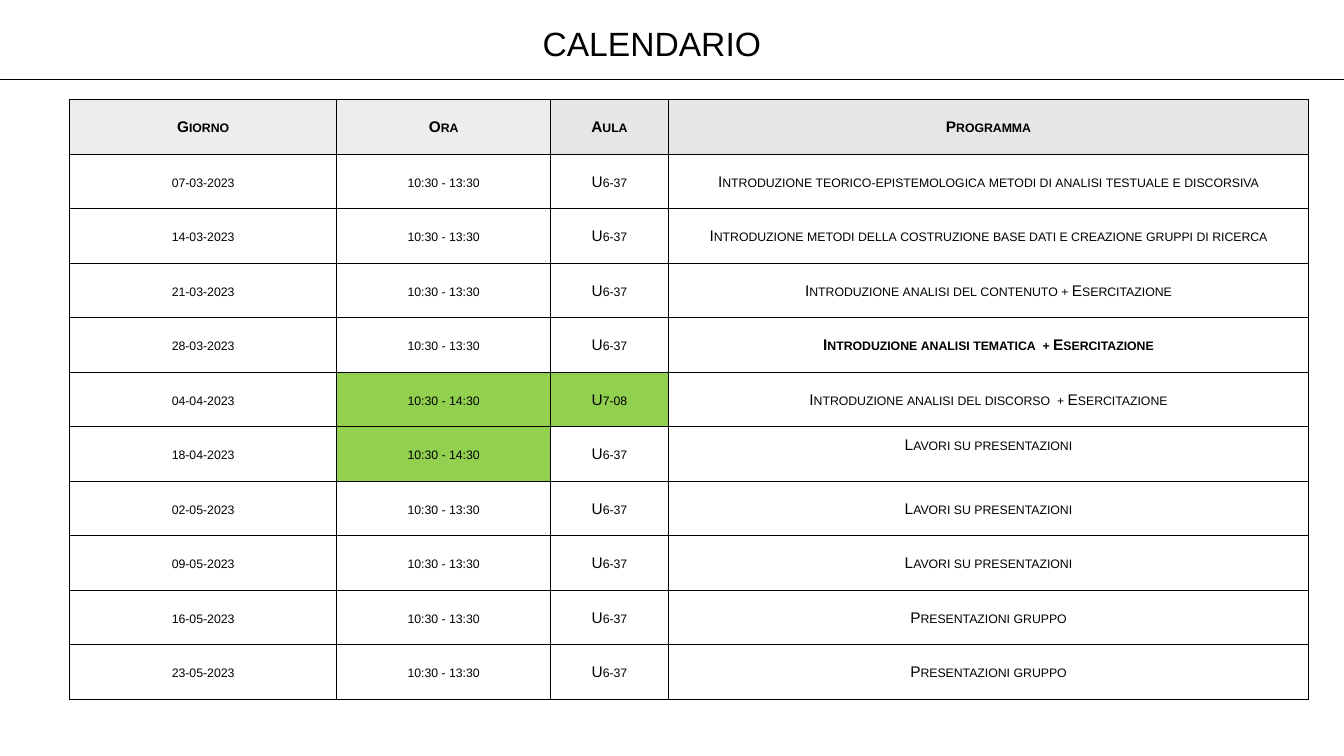
"""Build the course calendar slide."""
import pptx
import pptx.dml.color
import pptx.enum.shapes
import pptx.enum.text
import pptx.oxml.ns
import pptx.util
from lxml import etree

Inches, Pt = pptx.util.Inches, pptx.util.Pt
RGBColor = pptx.dml.color.RGBColor
CENTER = pptx.enum.text.PP_ALIGN.CENTER
MIDDLE = pptx.enum.text.MSO_ANCHOR.MIDDLE
qn = pptx.oxml.ns.qn

BLACK = RGBColor(0x00, 0x00, 0x00)
LIGHT_GRAY = RGBColor(0xED, 0xED, 0xED)
GRAY = RGBColor(0xE7, 0xE6, 0xE6)
GREEN = RGBColor(0x92, 0xD0, 0x50)

HEADER = ["Giorno", "Ora", "Aula", "Programma"]
HEADER_FILLS = [LIGHT_GRAY, LIGHT_GRAY, GRAY, GRAY]
USUAL_TIME, LONG_TIME = "10:30 - 13:30", "10:30 - 14:30"
USUAL_ROOM, OTHER_ROOM = "U6-37", "U7-08"
LESSONS = [
    ("07-03-2023", "Introduzione teorico-epistemologica metodi di analisi testuale e discorsiva"),
    ("14-03-2023", "Introduzione metodi della costruzione base dati e creazione gruppi di ricerca"),
    ("21-03-2023", "Introduzione analisi del contenuto + Esercitazione"),
    ("28-03-2023", "Introduzione analisi tematica  + Esercitazione"),
    ("04-04-2023", "Introduzione analisi del discorso  + Esercitazione"),
    ("18-04-2023", "Lavori su presentazioni"),
    ("02-05-2023", "Lavori su presentazioni"),
    ("09-05-2023", "Lavori su presentazioni"),
    ("16-05-2023", "Presentazioni gruppo"),
    ("23-05-2023", "Presentazioni gruppo"),
]
LONG_DAYS = {"04-04-2023", "18-04-2023"}
OTHER_ROOM_DAYS = {"04-04-2023"}
BOLD_DAY = "28-03-2023"
RAISED_DAY = "18-04-2023"
COLUMN_WIDTHS = [2.65, 2.12, 1.17, 6.35]


class SlideBuilder:
    def __init__(self, slide, font="Arial", color=BLACK):
        self.slide = slide
        self.font = font
        self.color = color

    def format_text(self, tf, size, bold=False):
        p = tf.paragraphs[0]
        p.alignment = CENTER
        for r in p.runs:
            r.font.name = self.font
            r.font.size = Pt(size)
            r.font.bold = bold
            r.font.color.rgb = self.color

    def title(self, text, left, top, width, height):
        sp = self.slide.shapes.title
        sp.left, sp.top = Inches(left), Inches(top)
        sp.width, sp.height = Inches(width), Inches(height)
        tf = sp.text_frame
        tf.text = text
        tf.word_wrap = True
        tf.vertical_anchor = MIDDLE
        self.format_text(tf, 24)

    def line(self, x1, y1, x2, y2, width):
        line = self.slide.shapes.add_connector(
            pptx.enum.shapes.MSO_CONNECTOR.STRAIGHT,
            Inches(x1), Inches(y1), Inches(x2), Inches(y2))
        line.line.color.rgb = self.color
        line.line.width = Pt(width)
        etree.SubElement(line._element.spPr, qn("a:effectLst"))

    def table(self, left, top, height, widths, row_count):
        table = self.slide.shapes.add_table(
            row_count, len(widths), Inches(left), Inches(top),
            Inches(sum(widths)), Inches(height)).table
        table.first_row = table.horz_banding = False
        for column, width in zip(table.columns, widths):
            column.width = Inches(width)
        for row in table.rows:
            row.height = Inches(height / row_count)
        return table

    def borders(self, cell, width):
        tc_pr = cell._tc.get_or_add_tcPr()
        for side in ("lnL", "lnR", "lnT", "lnB"):
            ln = etree.SubElement(tc_pr, qn("a:" + side), w=str(Pt(width)))
            fill = etree.SubElement(ln, qn("a:solidFill"))
            etree.SubElement(fill, qn("a:srgbClr"), val=str(self.color))

    def cell(self, cell, text, fill=None, bold=False, bottom=0):
        self.borders(cell, 0.5)
        if fill is None:
            cell.fill.background()
        else:
            cell.fill.solid()
            cell.fill.fore_color.rgb = fill
        cell.vertical_anchor = MIDDLE
        cell.margin_left = cell.margin_right = cell.margin_top = Inches(0.01)
        cell.margin_bottom = Inches(bottom)
        tf = cell.text_frame
        tf.text = text
        self.format_text(tf, 11, bold)
        for r in tf.paragraphs[0].runs:
            r.font._element.set("cap", "small")


def main():
    prs = pptx.Presentation()
    prs.slide_width, prs.slide_height = Inches(13.33), Inches(7.5)
    s = SlideBuilder(prs.slides.add_slide(prs.slide_layouts[5]))
    s.line(-0.01, 0.79, 13.33, 0.79, 1)
    s.title("CALENDARIO", 5.08, 0.17, 2.77, 0.52)

    table = s.table(0.69, 0.99, 5.95, COLUMN_WIDTHS, len(LESSONS) + 1)
    for col, (text, fill) in enumerate(zip(HEADER, HEADER_FILLS)):
        s.cell(table.cell(0, col), text, fill, bold=True)
    for row, (day, program) in enumerate(LESSONS, start=1):
        is_long, is_moved = day in LONG_DAYS, day in OTHER_ROOM_DAYS
        s.cell(table.cell(row, 0), day)
        s.cell(table.cell(row, 1), LONG_TIME if is_long else USUAL_TIME,
               GREEN if is_long else None)
        s.cell(table.cell(row, 2), OTHER_ROOM if is_moved else USUAL_ROOM,
               GREEN if is_moved else None)
        s.cell(table.cell(row, 3), program, bold=day == BOLD_DAY,
               bottom=0.18 if day == RAISED_DAY else 0)
    prs.save("out.pptx")


if __name__ == "__main__":
    main()
